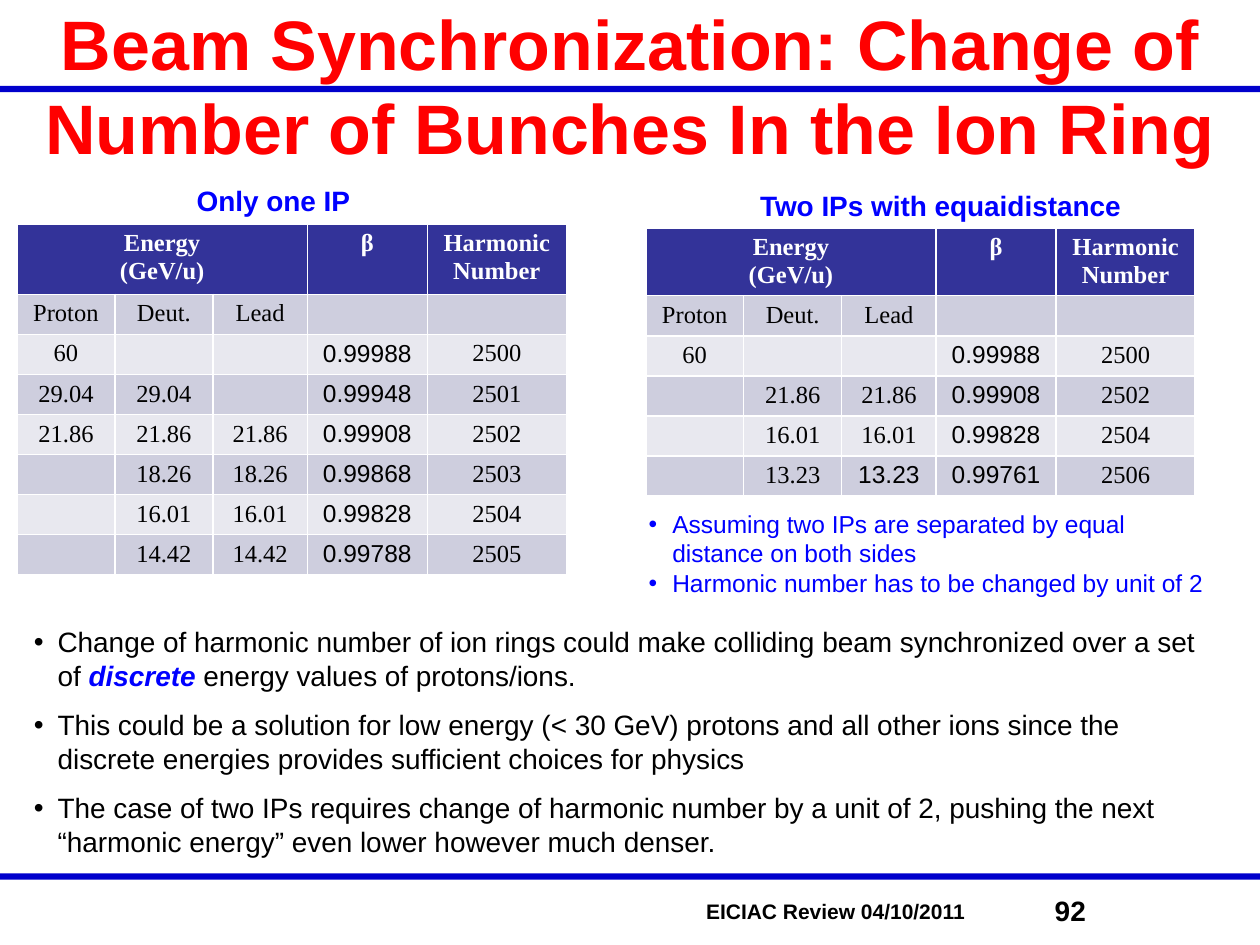
from dataclasses import dataclass

from lxml.etree import SubElement
from pptx import Presentation
from pptx.dml.color import RGBColor
from pptx.enum.shapes import MSO_SHAPE
from pptx.enum.text import MSO_ANCHOR as Anchor, MSO_AUTO_SIZE as AutoSize, PP_ALIGN as Align
from pptx.oxml.ns import qn
from pptx.util import Pt


@dataclass(frozen=True)
class Theme:
    sans: str = "Arial"
    serif: str = "Times New Roman"
    red: str = "FF0000"
    blue: str = "0000FF"
    rule: str = "0000CC"
    black: str = "000000"
    white: str = "FFFFFF"
    header: str = "333399"
    bands: tuple = ("E8E8EF", "CECEDE")
    title_size: int = 40
    body_size: int = 16
    table_size: int = 14
    footer_size: int = 12


THEME = Theme()
INDENT = 13.5
COLUMN_WIDTHS = (56, 56, 54, 68.5, 79.5)
ROW_HEIGHT = 22.9
BETA_COLUMN = 3
HEADINGS = {0: "Energy\n(GeV/u)", BETA_COLUMN: "β", 4: "Harmonic Number"}
IONS = ("Proton", "Deut.", "Lead", "", "")
ONE_IP = (
    IONS,
    ("60", "", "", "0.99988", "2500"),
    ("29.04", "29.04", "", "0.99948", "2501"),
    ("21.86", "21.86", "21.86", "0.99908", "2502"),
    ("", "18.26", "18.26", "0.99868", "2503"),
    ("", "16.01", "16.01", "0.99828", "2504"),
    ("", "14.42", "14.42", "0.99788", "2505"),
)
TWO_IPS = (
    IONS,
    ("60", "", "", "0.99988", "2500"),
    ("", "21.86", "21.86", "0.99908", "2502"),
    ("", "16.01", "16.01", "0.99828", "2504"),
    ("", "13.23", "13.23", "0.99761", "2506"),
)
NOTES = (
    "Assuming two IPs are separated by equal distance on both sides",
    "Harmonic number has to be changed by unit of 2",
)
EMPHASIS = "discrete"
CONCLUSIONS = (
    ("Change of harmonic number of ion rings could make colliding beam synchronized over a set of ",
     EMPHASIS, " energy values of protons/ions."),
    ("This could be a solution for low energy (< 30 GeV) protons and all other ions since the "
     "discrete energies provides sufficient choices for physics",),
    ("The case of two IPs requires change of harmonic number by a unit of 2, pushing the next "
     "“harmonic energy” even lower however much denser.",),
)


def style(paragraph, size, color, bold=False, name=THEME.sans, align=Align.CENTER):
    paragraph.alignment = align
    font = paragraph.font
    font.name, font.size, font.bold = name, Pt(size), bold
    font.color.rgb = RGBColor.from_string(color)


def add_bullet(paragraph):
    properties = paragraph._p.get_or_add_pPr()
    properties.set("marL", str(Pt(INDENT)))
    properties.set("indent", str(-Pt(INDENT)))
    SubElement(properties, qn("a:buFont")).set("typeface", THEME.sans)
    SubElement(properties, qn("a:buChar")).set("char", "•")


def place(shape, left, top, width, height):
    shape.left, shape.top, shape.width, shape.height = map(Pt, (left, top, width, height))


def paragraphs_for(frame, count):
    return [frame.paragraphs[0]] + [frame.add_paragraph() for _ in range(count - 1)]


def add_rule(slide, left, top, width, height):
    """Draw a bar behind everything else on the slide."""
    rule = slide.shapes.add_shape(MSO_SHAPE.RECTANGLE, *map(Pt, (left, top, width, height)))
    rule.shadow.inherit = False
    rule.fill.solid()
    rule.fill.fore_color.rgb = RGBColor.from_string(THEME.rule)
    rule.line.fill.background()
    rule.element.getparent().insert(2, rule.element)


def add_text_box(slide, left, top, width, height):
    frame = slide.shapes.add_textbox(*map(Pt, (left, top, width, height))).text_frame
    frame.word_wrap = True
    return frame


def add_label(slide, text, left, top, width, height, size=THEME.body_size, color=THEME.black):
    paragraph = add_text_box(slide, left, top, width, height).paragraphs[0]
    paragraph.text = text
    style(paragraph, size, color, bold=True)


def fill_title(slide, left, top, width, height):
    title = slide.shapes.title
    place(title, left, top, width, height)
    frame = title.text_frame
    frame.text = "Beam Synchronization: Change of Number of Bunches In the Ion Ring"
    frame.auto_size = AutoSize.NONE
    frame.vertical_anchor = Anchor.MIDDLE
    style(frame.paragraphs[0], THEME.title_size, THEME.red, bold=True)


def fill_conclusions(slide, left, top, width, height):
    body = slide.placeholders[1]
    place(body, left, top, width, height)
    frame = body.text_frame
    frame.auto_size = AutoSize.NONE
    for index, paragraph in enumerate(paragraphs_for(frame, len(CONCLUSIONS))):
        add_bullet(paragraph)
        paragraph.space_before = Pt(9 if index else 0)
        for text in CONCLUSIONS[index]:
            run = paragraph.add_run()
            run.text = text
            if text == EMPHASIS:
                run.font.bold = run.font.italic = True
                run.font.color.rgb = RGBColor.from_string(THEME.blue)
        style(paragraph, THEME.body_size, THEME.black, align=Align.LEFT)


def add_notes_list(slide, left, top, width, height):
    frame = add_text_box(slide, left, top, width, height)
    for text, paragraph in zip(NOTES, paragraphs_for(frame, len(NOTES))):
        add_bullet(paragraph)
        paragraph.text = text
        style(paragraph, THEME.table_size, THEME.blue, align=Align.LEFT)


def fill_cell(cell, text, fill, color, bold=False, name=THEME.serif):
    cell.text = text
    cell.margin_top = cell.margin_bottom = Pt(3.3)
    cell.fill.solid()
    cell.fill.fore_color.rgb = RGBColor.from_string(fill)
    for paragraph in cell.text_frame.paragraphs:
        style(paragraph, THEME.table_size, color, bold, name)


def add_energy_table(slide, rows, left, top, header_height, sans_cells=()):
    """Draw the energy table; sans_cells are (row, column) pairs set in the sans font."""
    height = header_height + ROW_HEIGHT * len(rows)
    box = map(Pt, (left, top, sum(COLUMN_WIDTHS), height))
    table = slide.shapes.add_table(len(rows) + 1, len(COLUMN_WIDTHS), *box).table
    for column, width in zip(table.columns, COLUMN_WIDTHS):
        column.width = Pt(width)
    for index, row in enumerate(table.rows):
        row.height = Pt(ROW_HEIGHT if index else header_height)
    table.cell(0, 0).merge(table.cell(0, BETA_COLUMN - 1))
    for column, text in HEADINGS.items():
        fill_cell(table.cell(0, column), text, THEME.header, THEME.white, bold=True)
    for row, values in enumerate(rows, start=1):
        for column, text in enumerate(values):
            is_sans = column == BETA_COLUMN or (row, column) in sans_cells
            fill_cell(table.cell(row, column), text, THEME.bands[row % 2], THEME.black,
                      name=THEME.sans if is_sans else THEME.serif)


def build_slide(presentation):
    slide = presentation.slides.add_slide(presentation.slide_layouts[1])
    for top in (49, 499):
        add_rule(slide, 0, top, 720, 3.6)
    fill_title(slide, 0, 5, 720, 86.4)
    fill_conclusions(slide, 12.2, 353.5, 691, 144.7)
    add_energy_table(slide, ONE_IP, 9.7, 128.2, header_height=40)
    add_energy_table(slide, TWO_IPS, 369, 130.5, header_height=38.5, sans_cells={(5, 2)})
    add_notes_list(slide, 363.6, 287.3, 338.4, 58.3)
    add_label(slide, "Only one IP", 53.3, 101.5, 206, 26.6, color=THEME.blue)
    add_label(slide, "Two IPs with equaidistance", 419, 104, 237, 26.6, color=THEME.blue)
    add_label(slide, "EICIAC Review 04/10/2011", 380, 509.8, 195, 21.6, size=THEME.footer_size)
    add_label(slide, "92", 579.6, 507, 64, 26.6)


def main():
    presentation = Presentation()
    presentation.slide_width, presentation.slide_height = Pt(720), Pt(540)
    build_slide(presentation)
    presentation.save("out.pptx")


if __name__ == "__main__":
    main()
